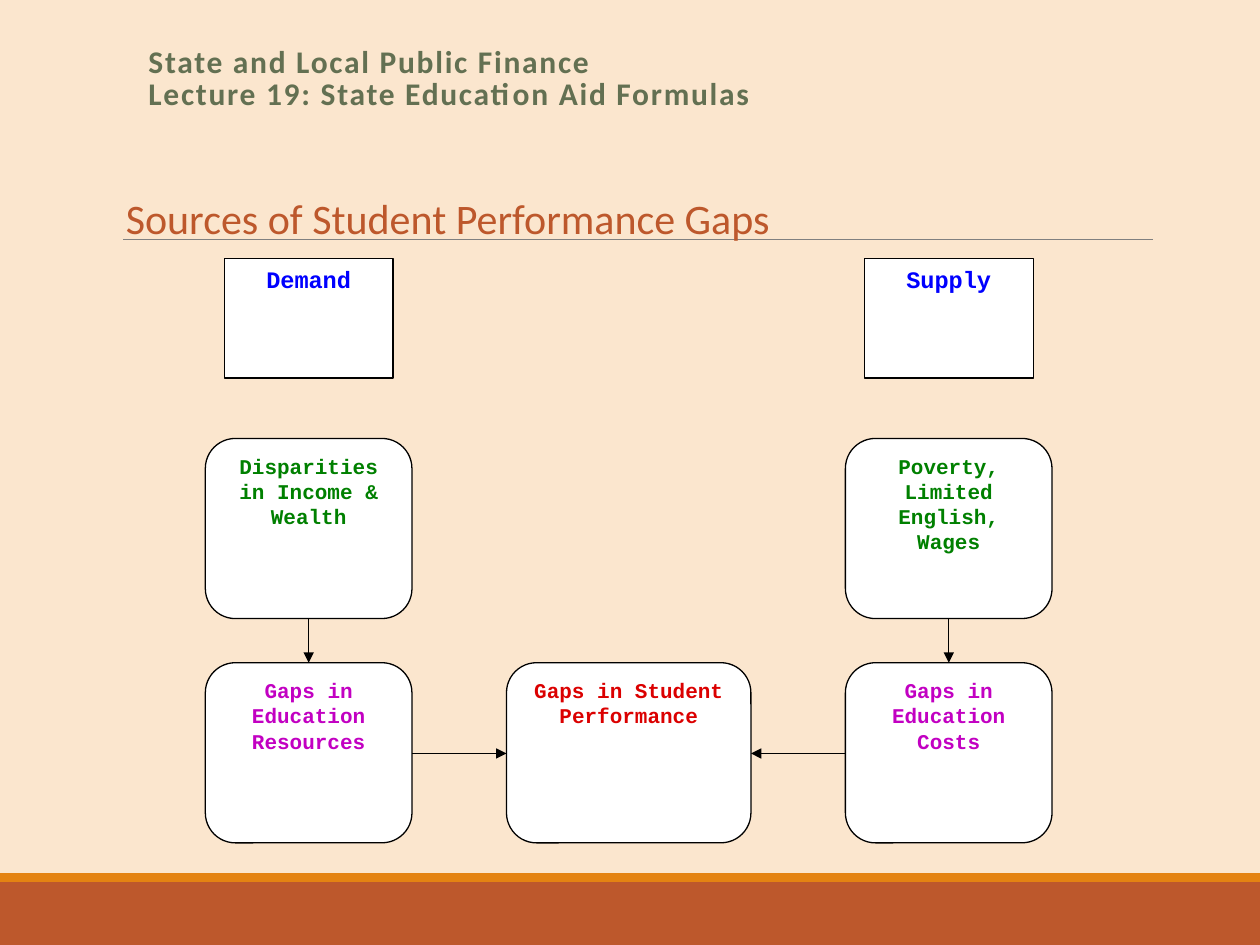
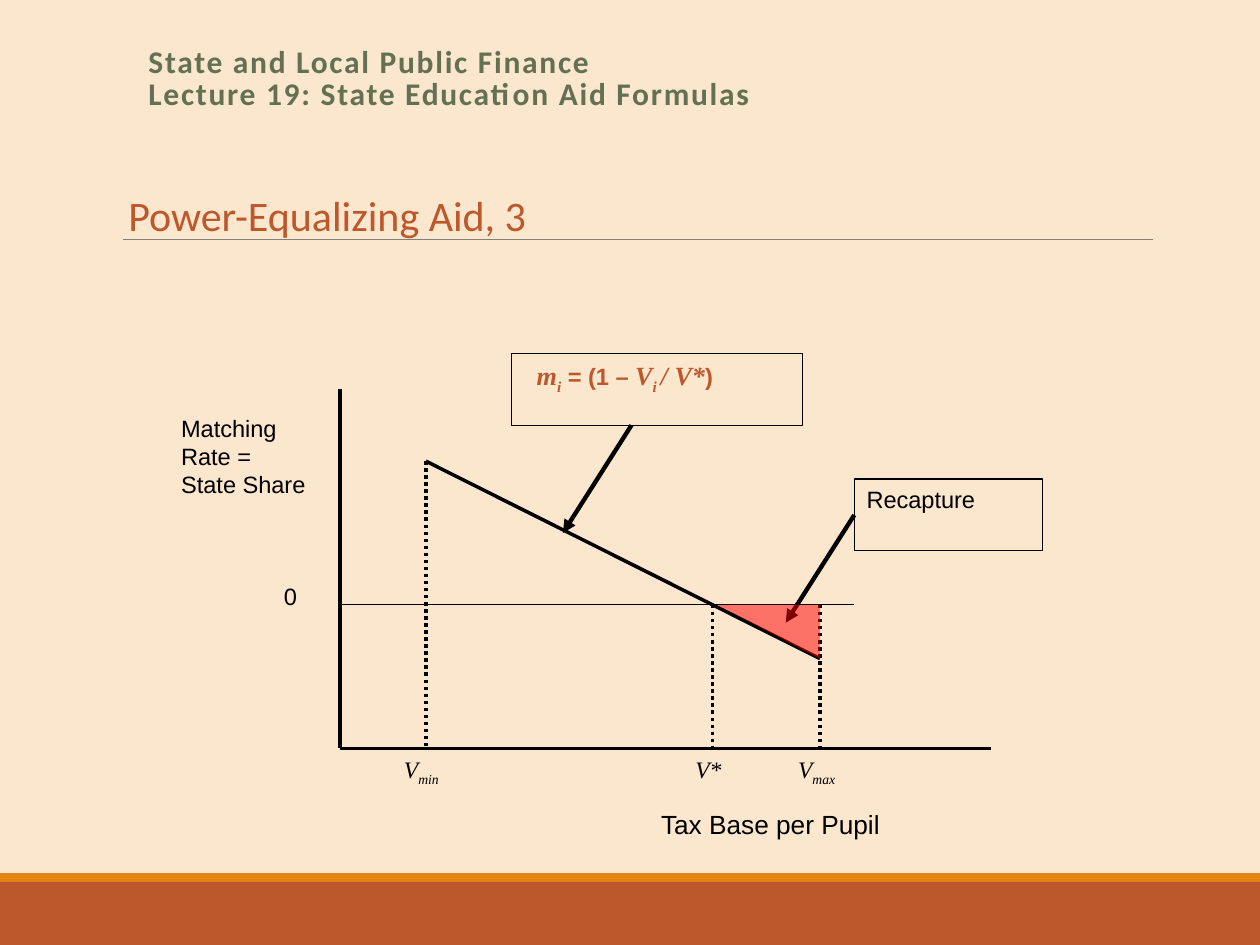
from lxml import etree
from pptx import Presentation
from pptx import util as u
from pptx.dml import color
from pptx.enum import dml, shapes, text
from pptx.oxml import ns

# Shared look
hue = color.RGBColor.from_string
CREAM, RUST, ORANGE, GREY, SAGE = "FBE6CE", "BD582C", "E48312", "808080", "637052"
BLACK, WHITE, BLUE, GREEN, PURPLE, RED = "000000", "FFFFFF", "0000FF", "008000", "C200C2", "DB0000"
HEADER = "State and Local Public Finance\vLecture 19: State Education Aid Formulas"

# Grids: left, top, column width, row height in inches
SLIDE = (0, 0, 1, 1)
PLOT = (2.7, 3.09, 4.08 / 30, 2.85 / 20)


def draw_box(page, grid, place, words="", kind=None, fill=None, outline=None,
             font="Arial", size=13.5, ink=BLACK, bold=False, italic=False, align=None):
    left, top, column, row = grid
    area = [u.Inches(n) for n in (left + place[0] * column, top + place[1] * row,
                                  place[2] * column, place[3] * row)]
    if kind is None:
        box = page.shapes.add_textbox(*area)
    else:
        box = page.shapes.add_shape(kind, *area)
        box.shadow.inherit = False
        if fill:
            box.fill.solid()
            box.fill.fore_color.rgb = hue(fill)
        else:
            box.fill.background()
        if outline:
            box.line.color.rgb = hue(outline)
            box.line.width = u.Pt(0.75)
        else:
            box.line.fill.background()
    frame = box.text_frame
    frame.word_wrap = True
    frame.vertical_anchor = text.MSO_ANCHOR.TOP
    frame.text = words
    for para in frame.paragraphs:
        para.alignment = align or text.PP_ALIGN.LEFT
        for span in para.runs:
            span.font.name, span.font.size = font, u.Pt(size)
            span.font.bold, span.font.italic = bold, italic
            span.font.color.rgb = hue(ink)
    return box


def draw_line(page, grid, start, end, width=0.75, ink=BLACK, arrow=False, dotted=False):
    left, top, column, row = grid
    ends = [u.Inches(n) for x, y in (start, end) for n in (left + x * column, top + y * row)]
    line = page.shapes.add_connector(shapes.MSO_CONNECTOR.STRAIGHT, *ends)
    line.line.color.rgb = hue(ink)
    line.line.width = u.Pt(width)
    if dotted:
        line.line.dash_style = dml.MSO_LINE.ROUND_DOT
    properties = line._element.spPr
    if arrow:
        etree.SubElement(properties.find(ns.qn("a:ln")), ns.qn("a:tailEnd"), type="triangle")
    etree.SubElement(properties, ns.qn("a:effectLst"))


deck = Presentation()
deck.slide_width, deck.slide_height = u.Inches(10), u.Inches(7.5)
RECTANGLE = shapes.MSO_SHAPE.RECTANGLE

# Background, bands, rule, header and title of both slides
titles = [("Sources of Student Performance Gaps", 0.9, 1.48),
          ("Power-Equalizing Aid, 3", 0.92, 1.48)]
for title, left, top in titles:
    page = deck.slides.add_slide(deck.slide_layouts[6])
    page.background.fill.solid()
    page.background.fill.fore_color.rgb = hue(CREAM)
    draw_box(page, SLIDE, (0, 7, 10, 0.5), kind=RECTANGLE, fill=RUST)
    draw_box(page, SLIDE, (0, 6.93, 10, 0.07), kind=RECTANGLE, fill=ORANGE)
    draw_line(page, SLIDE, (0.98, 1.9), (9.15, 1.9), 0.5, GREY)
    header = draw_box(page, SLIDE, (1.08, 0.33, 8.25, 0.65), HEADER,
                      font="Calibri", size=18, ink=SAGE, bold=True)
    header.text_frame.paragraphs[0].line_spacing = 0.85
    for span in header.text_frame.paragraphs[0].runs:
        span.font._element.set("spc", "100")
    heading = draw_box(page, SLIDE, (left, top, 5.54, 0.5), title,
                       font="Calibri", size=24, ink=RUST)
    heading.text_frame.vertical_anchor = text.MSO_ANCHOR.MIDDLE
flow_page, plot_page = deck.slides
# The second title is set tighter and slightly higher
heading.text_frame.paragraphs[0].line_spacing = 0.9

# Flow chart: three columns by their centres, three rows by their tops
demand, middle, supply = 2.45, 4.99, 7.53
labels, causes, gaps = 2.05, 3.48, 5.26
card_width, card_height, centre_width = 1.64, 1.43, 1.94
ROUNDED = shapes.MSO_SHAPE.FLOWCHART_ALTERNATE_PROCESS
PLAIN = shapes.MSO_SHAPE.FLOWCHART_PROCESS
cards = [
    (supply, causes, card_width, card_height, ROUNDED, "Poverty, Limited English, Wages", GREEN, 12),
    (demand, causes, card_width, card_height, ROUNDED, "Disparities in Income & Wealth", GREEN, 12),
    (demand, gaps, card_width, card_height, ROUNDED, "Gaps in Education Resources", PURPLE, 12),
    (supply, gaps, card_width, card_height, ROUNDED, "Gaps in Education Costs", PURPLE, 12),
    (middle, gaps, centre_width, card_height, ROUNDED, "Gaps in Student Performance", RED, 12),
    (demand, labels, 1.34, 0.95, PLAIN, "Demand", BLUE, 13.5),
    (supply, labels, 1.34, 0.95, PLAIN, "Supply", BLUE, 13.5),
]
for centre, top, width, height, kind, words, ink, size in cards:
    draw_box(flow_page, SLIDE, (centre - width / 2, top, width, height), words, kind, WHITE, BLACK,
             "Courier New", size, ink, bold=True, align=text.PP_ALIGN.CENTER)
for centre, side in ((demand, 1), (supply, -1)):
    draw_line(flow_page, SLIDE, (centre, causes + card_height), (centre, gaps), arrow=True)
    draw_line(flow_page, SLIDE, (centre + side * card_width / 2, gaps + 0.72),
              (middle - side * centre_width / 2, gaps + 0.72), arrow=True)

# Plot: axes, zero line and matching rate line
bottom, zero = 20, 12
v_min, v_max, rate_top, rate_end = 5, 28, 4, 15
v_star = v_min + (v_max - v_min) * (zero - rate_top) / (rate_end - rate_top)
draw_line(plot_page, PLOT, (0, 0), (0, bottom), 2)
draw_line(plot_page, PLOT, (0, bottom), (38, bottom), 2)
draw_line(plot_page, PLOT, (0, zero), (30, zero))
draw_line(plot_page, PLOT, (v_min, rate_top), (v_max, rate_end), 2)
for column, top in ((v_min, rate_top), (v_star, zero), (v_max, zero)):
    draw_line(plot_page, PLOT, (column, top), (column, bottom), 2, dotted=True)

# Plain labels
draw_box(plot_page, PLOT, (-4, 10.4, 4, 4), "0")
draw_box(plot_page, PLOT, (-10, 1, 12.8, 7), "Matching\nRate =\nState Share")
draw_box(plot_page, PLOT, (18, 23, 21, 4), "Tax Base per Pupil", size=15)
draw_box(plot_page, PLOT, (20, bottom, 5, 4), "V*", font="Times New Roman", italic=True)
draw_box(plot_page, PLOT, (30, 5, 11, 4), "Recapture", RECTANGLE, outline=BLACK)

# Labels with subscripts: words, font, size, subscript
SERIF, SANS = "Times New Roman", "Arial"
formula = draw_box(plot_page, PLOT, (10, -2, 17, 4), kind=RECTANGLE, outline=BLACK)
formula.text_frame.margin_left = u.Inches(0.2)
mixed_labels = [
    (draw_box(plot_page, PLOT, (3, bottom, 8, 4)), BLACK, False,
     [("V", SERIF, 13.5, False), ("min", SERIF, 13.5, True)]),
    (draw_box(plot_page, PLOT, (26, bottom, 8, 4)), BLACK, False,
     [("V", SERIF, 13.5, False), ("max", SERIF, 13.5, True)]),
    (formula, RUST, True,
     [("m", SERIF, 15, False), ("i", SERIF, 15, True), (" = (1 – ", SANS, 13.5, False),
      ("V", SERIF, 15, False), ("i ", SERIF, 15, True), ("/ V*", SERIF, 15, False),
      (")", SANS, 13.5, False)]),
]
for box, ink, bold, spans in mixed_labels:
    for words, font, size, subscript in spans:
        span = box.text_frame.paragraphs[0].add_run()
        span.text = words
        span.font.name, span.font.size = font, u.Pt(size)
        span.font.bold, span.font.italic = bold, font == SERIF
        span.font.color.rgb = hue(ink)
        if subscript:
            span.font._element.set("baseline", "-25000")

# Pointers and the see-through recapture area
draw_line(plot_page, PLOT, (30, 7), (26, 13), 2.5, arrow=True)
draw_line(plot_page, PLOT, (17, 2), (13, 8), 2.5, arrow=True)
recapture = draw_box(plot_page, PLOT, (22, zero, 6, 3),
                     kind=shapes.MSO_SHAPE.RIGHT_TRIANGLE, fill="FF0000")
recapture.rotation = 180
tint = recapture._element.spPr.find(ns.qn("a:solidFill")).find(ns.qn("a:srgbClr"))
etree.SubElement(tint, ns.qn("a:alpha"), val="50000")

deck.save("out.pptx")
